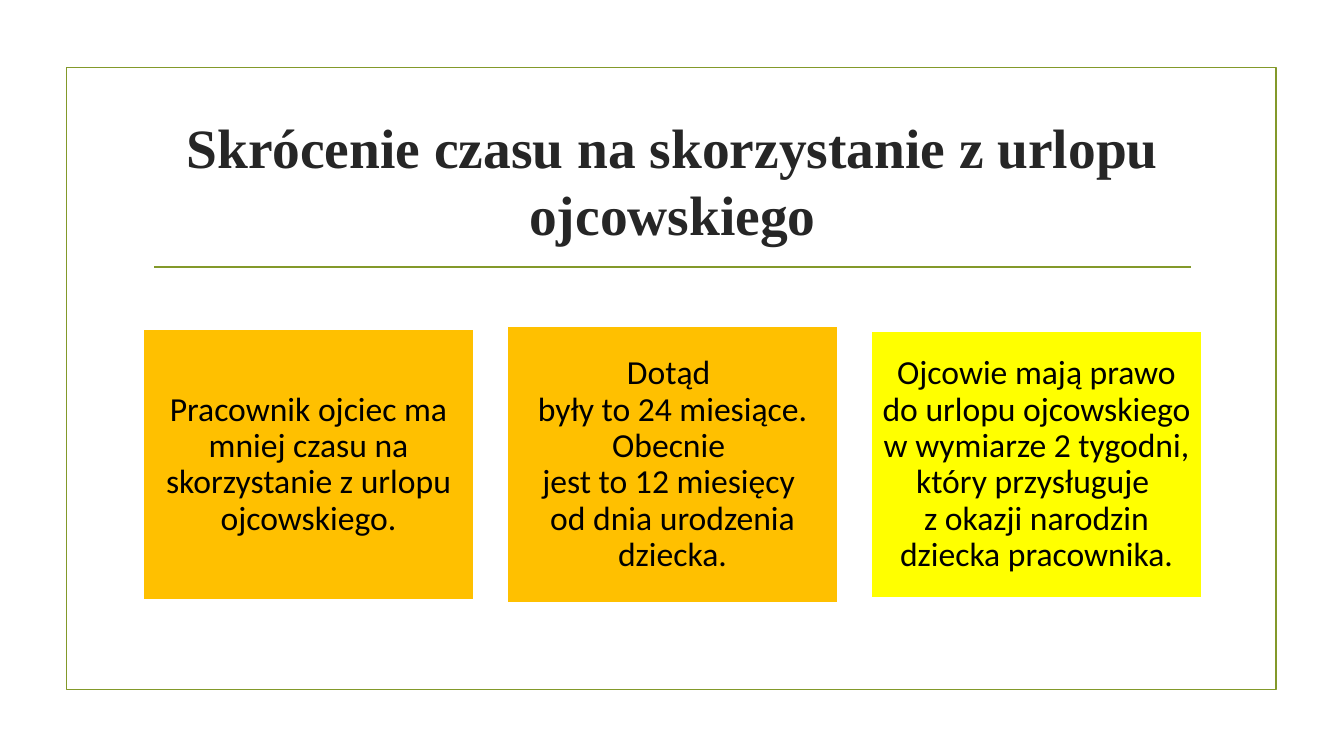
from dataclasses import dataclass

from pptx import Presentation
from pptx.dml.color import RGBColor
from pptx.enum.shapes import MSO_CONNECTOR as Connector, MSO_SHAPE as Shape
from pptx.enum.text import MSO_ANCHOR as Anchor, PP_ALIGN as Align
from pptx.oxml.ns import qn
from pptx.util import Emu, Pt
from lxml.etree import SubElement

EMU_PER_PX = 9144  # 100 px to the inch


@dataclass(frozen=True)
class Theme:
    green: str = "83992A"
    orange: str = "FFC000"
    yellow: str = "FFFF00"
    white: str = "FFFFFF"
    black: str = "000000"
    dark: str = "262626"
    title_font: str = "Times New Roman"
    body_font: str = "Calibri"
    title_size: float = 39.6
    body_size: float = 24
    line_width: float = 1.25


THEME = Theme()

TITLE = "Skrócenie czasu na skorzystanie z urlopu ojcowskiego"

# Text, fill and height of each card
CARDS = [
    ("Pracownik ojciec ma mniej czasu na skorzystanie z urlopu ojcowskiego.",
     THEME.orange, 269),
    ("Dotąd \nbyły to 24 miesiące. Obecnie \njest to 12 miesięcy \n"
     "od dnia urodzenia dziecka.",
     THEME.orange, 275),
    ("Ojcowie mają prawo do urlopu ojcowskiego w wymiarze 2 tygodni, "
     "który przysługuje \nz okazji narodzin dziecka pracownika.",
     THEME.yellow, 265),
]
CARD_LEFT, CARD_WIDTH, CARD_STEP, CARD_MIDDLE = 142, 328, 361, 461


def px(length):
    return Emu(round(length * EMU_PER_PX))


def color(value):
    return RGBColor.from_string(value)


def write_text(frame, text, *, font, size, text_color, bold=False,
               line_spacing=1.0, inset=10):
    frame.word_wrap = True
    frame.vertical_anchor = Anchor.MIDDLE
    frame.margin_left = frame.margin_right = px(inset)
    frame.margin_top = frame.margin_bottom = px(inset)
    paragraph = frame.paragraphs[0]
    paragraph.text = text
    paragraph.alignment = Align.CENTER
    paragraph.line_spacing = line_spacing
    paragraph.font.name = font
    paragraph.font.size = Pt(size)
    paragraph.font.bold = bold
    paragraph.font.color.rgb = color(text_color)


def style_line(line, line_color):
    line.color.rgb = color(line_color)
    line.width = Pt(THEME.line_width)


def add_box(slide, left, top, width, height, line_color, fill=None):
    shape = slide.shapes.add_shape(
        Shape.RECTANGLE, px(left), px(top), px(width), px(height))
    shape.shadow.inherit = False
    if fill:
        shape.fill.solid()
        shape.fill.fore_color.rgb = color(fill)
    else:
        shape.fill.background()
    style_line(shape.line, line_color)
    return shape


def add_rule(slide, left, right, y):
    rule = slide.shapes.add_connector(
        Connector.STRAIGHT, px(left), px(y), px(right), px(y))
    style_line(rule.line, THEME.green)
    SubElement(rule._element.spPr, qn("a:effectLst"))


def add_title(slide, text):
    box = slide.shapes.add_textbox(px(142), px(107), px(1050), px(143))
    write_text(box.text_frame, text, font=THEME.title_font,
               size=THEME.title_size, text_color=THEME.dark, bold=True)


def add_card(slide, index, text, fill, height):
    card = add_box(slide, CARD_LEFT + index * CARD_STEP,
                   CARD_MIDDLE - height / 2, CARD_WIDTH, height,
                   THEME.white, fill)
    write_text(card.text_frame, text, font=THEME.body_font,
               size=THEME.body_size, text_color=THEME.black,
               line_spacing=0.9)


def main():
    presentation = Presentation()
    presentation.slide_width = px(1333)
    presentation.slide_height = px(750)
    slide = presentation.slides.add_slide(presentation.slide_layouts[6])

    # Frame and heading
    add_box(slide, 66, 67, 1200, 617, THEME.green)
    add_rule(slide, 153, 1181, 265)
    add_title(slide, TITLE)

    # Cards, centred on one horizontal axis
    for index, (text, fill, height) in enumerate(CARDS):
        add_card(slide, index, text, fill, height)

    presentation.save("out.pptx")


if __name__ == "__main__":
    main()
